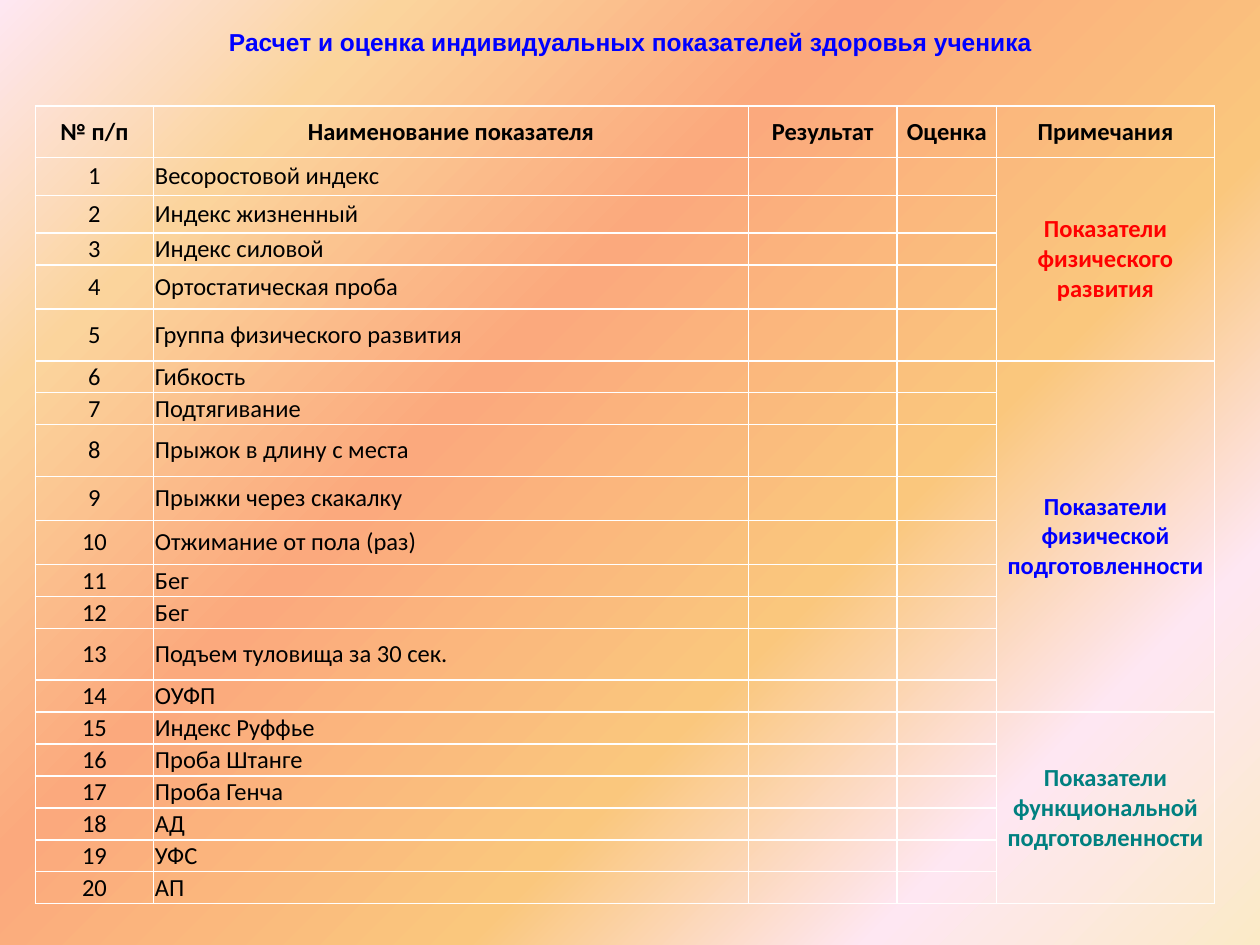
from lxml.etree import SubElement
from pptx import Presentation
from pptx.dml.color import RGBColor
from pptx.enum.text import MSO_ANCHOR as Anchor, PP_ALIGN as Align
from pptx.oxml.ns import qn
from pptx.util import Inches, Pt

BLACK = RGBColor(0x00, 0x00, 0x00)
WHITE = RGBColor(0xFF, 0xFF, 0xFF)
RED = RGBColor(0xFF, 0x00, 0x00)
BLUE = RGBColor(0x00, 0x00, 0xFF)
TEAL = RGBColor(0x00, 0x80, 0x80)
CREAM = RGBColor(0xFB, 0xEA, 0xC7)
PINK = RGBColor(0xFE, 0xE7, 0xF2)
AMBER = RGBColor(0xFA, 0xC7, 0x7D)
SALMON = RGBColor(0xFB, 0xA9, 0x7D)
SAND = RGBColor(0xFB, 0xD4, 0x9C)

BACKGROUND = [(0, CREAM), (18, PINK), (36, AMBER), (61, SALMON), (82, SAND), (100, PINK)]
TITLE = "Расчет и оценка индивидуальных показателей здоровья ученика"
HEADERS = ["№ п/п", "Наименование показателя", "Результат", "Оценка", "Примечания"]
WIDTHS = [0.94, 4.72, 1.18, 0.79, 1.73]
HEADER_HEIGHT = 0.41
INDICATORS = [
    ("Весоростовой индекс", 0.3),
    ("Индекс жизненный", 0.3),
    ("Индекс силовой", 0.25),
    ("Ортостатическая проба", 0.35),
    ("Группа физического развития", 0.41),
    ("Гибкость", 0.25),
    ("Подтягивание", 0.25),
    ("Прыжок в длину с места", 0.41),
    ("Прыжки через скакалку", 0.35),
    ("Отжимание от пола (раз)", 0.35),
    ("Бег", 0.25),
    ("Бег", 0.25),
    ("Подъем туловища за 30 сек.", 0.41),
    ("ОУФП", 0.25),
    ("Индекс Руффье", 0.25),
    ("Проба Штанге", 0.25),
    ("Проба Генча", 0.25),
    ("АД", 0.25),
    ("УФС", 0.25),
    ("АП", 0.25),
]
NOTES = [
    ("Показатели физического развития", 5, RED),
    ("Показатели физической подготовленности", 9, BLUE),
    ("Показатели функциональной подготовленности", 6, TEAL),
]


class SlideBuilder:
    title_font = "Arial"
    table_font = "Calibri"
    size = Pt(14)
    inset = Inches(0.01)

    def __init__(self, page):
        self.page = page

    def background(self, stops, angle):
        fill = self.page.background.fill
        fill.gradient()
        fill.gradient_angle = angle
        stop_list = next(self.page.element.iter(qn("a:gsLst")))
        for stop in list(stop_list):
            stop_list.remove(stop)
        for position, color in stops:
            stop = SubElement(stop_list, qn("a:gs"), pos=str(position * 1000))
            SubElement(stop, qn("a:srgbClr"), val=str(color))

    def set_text(self, frame, text, font, color, bold, align):
        frame.text = text
        paragraph = frame.paragraphs[0]
        paragraph.alignment = align
        for span in paragraph.runs:
            span.font.name = font
            span.font.size = self.size
            span.font.bold = bold
            span.font.color.rgb = color

    def title(self, text, left, top, width, height):
        box = self.page.shapes.add_textbox(left, top, width, height)
        frame = box.text_frame
        frame.word_wrap = False
        frame.vertical_anchor = Anchor.MIDDLE
        frame.margin_top = Inches(0.51)
        frame.margin_bottom = Inches(0.34)
        self.set_text(frame, text, self.title_font, BLUE, True, Align.CENTER)

    def table(self, left, top, widths, heights):
        frame = self.page.shapes.add_table(
            len(heights), len(widths), left, top,
            Inches(sum(widths)), Inches(sum(heights)))
        table = frame.table
        table.first_row = table.horz_banding = False
        for column, width in zip(table.columns, widths):
            column.width = Inches(width)
        for row, height in zip(table.rows, heights):
            row.height = Inches(height)
        for cell in table.iter_cells():
            self.style_cell(cell)
        return table

    def style_cell(self, cell):
        cell.margin_left = cell.margin_right = self.inset
        cell.margin_top = cell.margin_bottom = self.inset
        cell.vertical_anchor = Anchor.MIDDLE
        properties = cell._tc.get_or_add_tcPr()
        for side in ("lnL", "lnR", "lnT", "lnB"):
            line = SubElement(properties, qn(f"a:{side}"), w=str(int(Pt(1))))
            solid = SubElement(line, qn("a:solidFill"))
            SubElement(solid, qn("a:srgbClr"), val=str(WHITE))
        cell.fill.background()
        paragraph = cell.text_frame.paragraphs[0]
        SubElement(paragraph._p, qn("a:endParaRPr"), sz=str(int(self.size.pt * 100)))

    def cell(self, cell, text, color=BLACK, bold=False, align=Align.CENTER):
        self.set_text(cell.text_frame, text, self.table_font, color, bold, align)


def main():
    deck = Presentation()
    deck.slide_width = Inches(10)
    deck.slide_height = Inches(7.5)
    builder = SlideBuilder(deck.slides.add_slide(deck.slide_layouts[6]))

    builder.background(BACKGROUND, 135)
    builder.title(TITLE, Inches(1.45), Inches(-0.31), Inches(7.11), Inches(1.11))

    heights = [HEADER_HEIGHT] + [height for _, height in INDICATORS]
    table = builder.table(Inches(0.28), Inches(0.84), WIDTHS, heights)
    for column, header in enumerate(HEADERS):
        builder.cell(table.cell(0, column), header, bold=True)
    for number, (name, _) in enumerate(INDICATORS, 1):
        builder.cell(table.cell(number, 0), str(number))
        builder.cell(table.cell(number, 1), name, align=Align.LEFT)

    first = 1
    note_column = len(WIDTHS) - 1
    for note, count, color in NOTES:
        top_cell = table.cell(first, note_column)
        top_cell.merge(table.cell(first + count - 1, note_column))
        builder.cell(top_cell, note, color, True)
        first += count

    deck.save("out.pptx")


if __name__ == "__main__":
    main()
